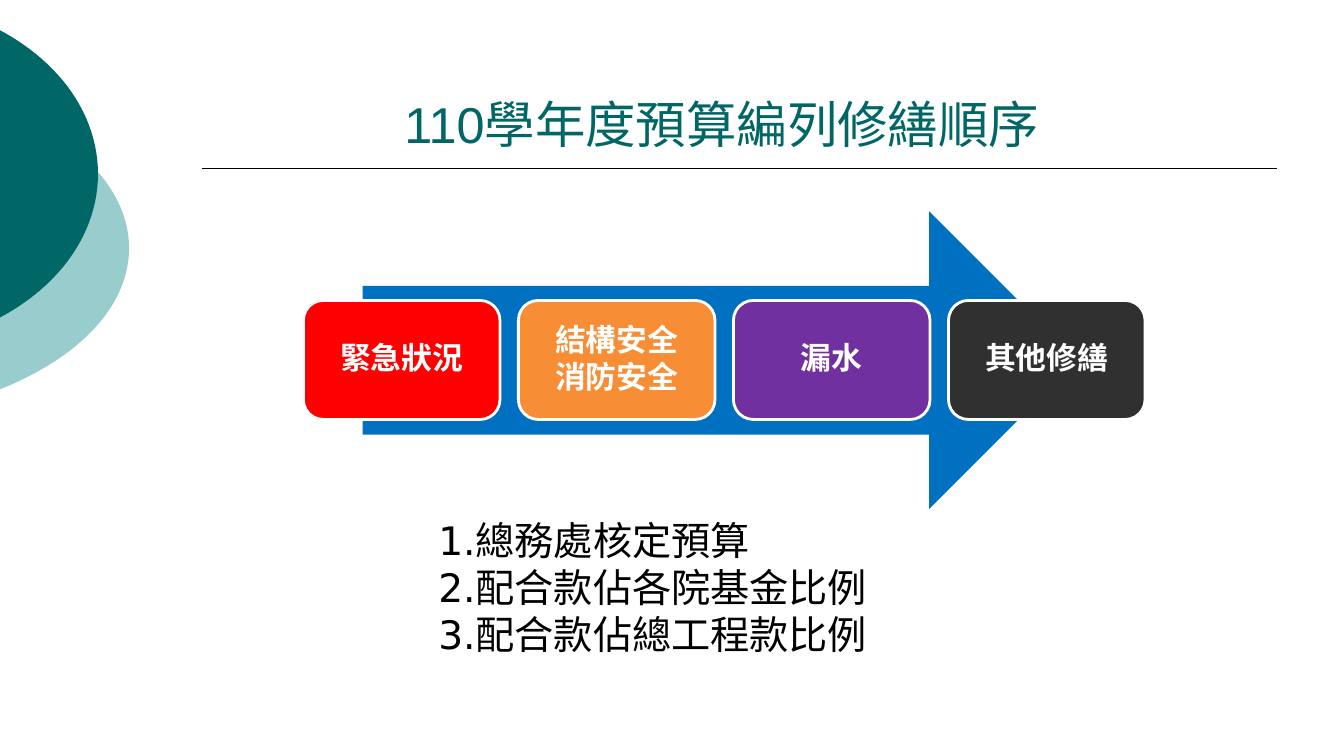
from lxml import etree
from pptx import Presentation
from pptx.dml.color import RGBColor
from pptx.enum.shapes import MSO_CONNECTOR, MSO_SHAPE
from pptx.enum.text import MSO_ANCHOR, PP_ALIGN
from pptx.oxml.ns import qn
from pptx.util import Pt

ARROW = MSO_SHAPE.RIGHT_ARROW
ROUNDED = MSO_SHAPE.ROUNDED_RECTANGLE
LINE = MSO_CONNECTOR.STRAIGHT
CENTER = PP_ALIGN.CENTER
LEFT = PP_ALIGN.LEFT
MIDDLE = MSO_ANCHOR.MIDDLE
BOTTOM = MSO_ANCHOR.BOTTOM


def rgb(color):
    return RGBColor.from_string(color)


def write(tf, text, align, size, name, color, bold=False):
    tf.word_wrap = True
    tf.text = text
    for p in tf.paragraphs:
        p.alignment = align
        p.font.size = Pt(size)
        p.font.bold = bold
        p.font.color.rgb = rgb(color)
        p.font.name = name
        etree.SubElement(p._p.pPr.find(qn("a:defRPr")), qn("a:ea"), typeface=name)


prs = Presentation()
prs.slide_width = Pt(960)
prs.slide_height = Pt(540)
s = prs.slides.add_slide(prs.slide_layouts[5])

STEPS = 24
for top, width, half, color in [
    (76.5, 92.2, 100.8, "99CCCC"),
    (21.6, 70, 102.6, "006666"),
]:
    arc = []
    for i in range(STEPS + 1):
        t = i / STEPS
        a, b, c = 3 * t * (1 - t) ** 2, 3 * t**2 * (1 - t), t**3
        arc.append((width * (0.63 * a + b + c), half * (0.23 * a + 0.6 * b + c)))
    lower = [(x, 2 * half - y) for x, y in reversed(arc[:-1])]
    points = [(Pt(x), Pt(top + y)) for x, y in arc + lower]
    builder = s.shapes.build_freeform(*points[0])
    builder.add_line_segments(points[1:], close=True)
    sp = builder.convert_to_shape()
    sp.shadow.inherit = False
    sp.fill.solid()
    sp.fill.fore_color.rgb = rgb(color)
    sp.line.fill.background()

rule = s.shapes.add_connector(LINE, Pt(144), Pt(120.5), Pt(912), Pt(120.5))
rule.line.color.rgb = rgb("000000")
rule.line.width = Pt(1)
etree.SubElement(rule._element.spPr, qn("a:effectLst"))

title = s.shapes.title
title.left, title.top, title.width, title.height = Pt(227.5), Pt(65.5), Pt(576), Pt(47.5)
title.text_frame.vertical_anchor = BOTTOM
write(title.text_frame, "110學年度預算編列修繕順序", CENTER, 36, "Arial", "006666")

arrow = s.shapes.add_shape(ARROW, Pt(259), Pt(151), Pt(511), Pt(212.5))
arrow.shadow.inherit = False
arrow.fill.solid()
arrow.fill.fore_color.rgb = rgb("0070C0")
arrow.line.fill.background()

PRIORITIES = [
    ("緊急狀況", "FF0000"),
    ("結構安全\n消防安全", "F78D35"),
    ("漏水", "7030A0"),
    ("其他修繕", "303030"),
]
for i, (text, color) in enumerate(PRIORITIES):
    sp = s.shapes.add_shape(ROUNDED, Pt(216.7 + 153.6 * i), Pt(214.6), Pt(140.4), Pt(85))
    sp.shadow.inherit = False
    sp.fill.solid()
    sp.fill.fore_color.rgb = rgb(color)
    sp.line.color.rgb = rgb("FFFFFF")
    sp.line.width = Pt(2)
    tf = sp.text_frame
    tf.vertical_anchor = MIDDLE
    write(tf, text, CENTER, 22, "Noto Sans CJK SC", "FFFFFF", True)
    for p in tf.paragraphs:
        p.line_spacing = 0.9
        p.space_after = Pt(2.7)

criteria = s.shapes.add_textbox(Pt(306), Pt(365), Pt(357), Pt(108.7))
write(
    criteria.text_frame,
    "1.總務處核定預算\n2.配合款佔各院基金比例\n3.配合款佔總工程款比例",
    LEFT, 28, "DejaVu Sans", "000000",
)

prs.save("out.pptx")
